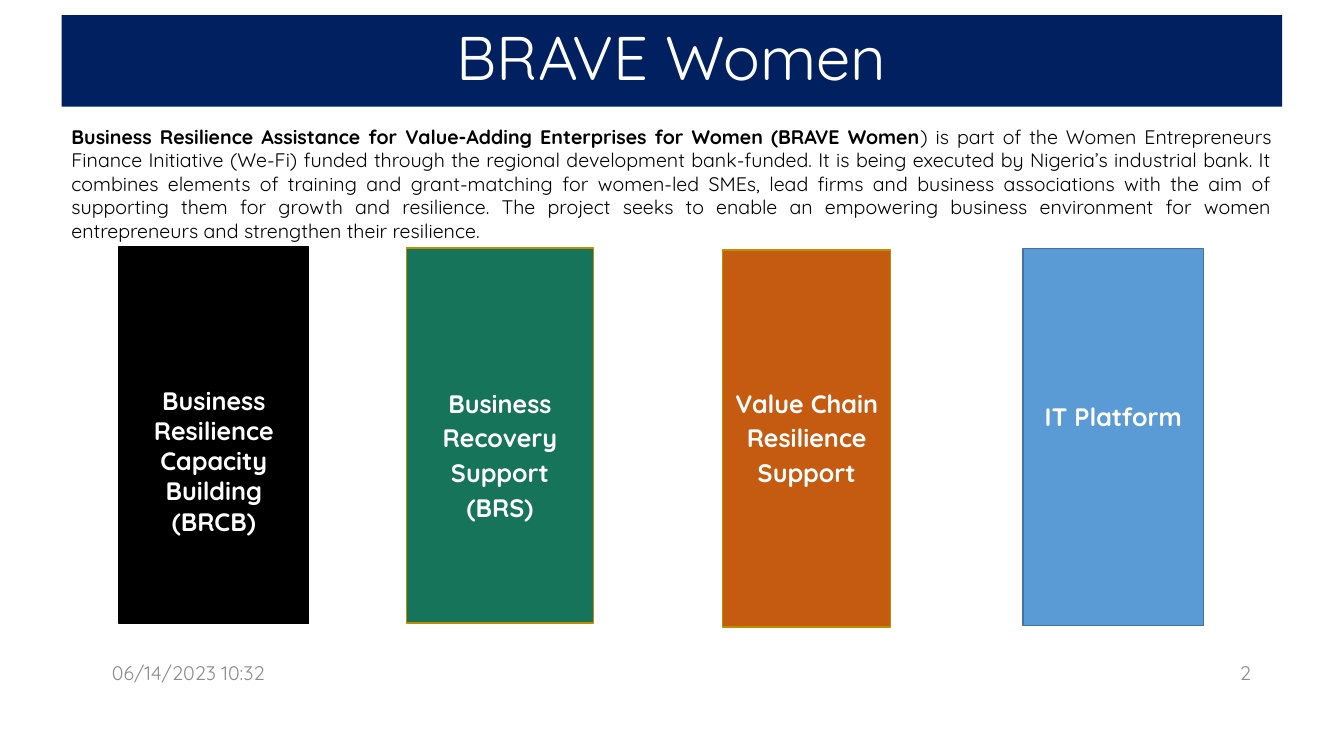
from pptx import Presentation
from pptx.dml.color import RGBColor
from pptx.enum.shapes import MSO_SHAPE
from pptx.enum.text import MSO_ANCHOR, MSO_AUTO_SIZE, PP_ALIGN
from pptx.util import Cm, Pt

RECT = MSO_SHAPE.RECTANGLE
TOP, MIDDLE = MSO_ANCHOR.TOP, MSO_ANCHOR.MIDDLE
LEFT, CENTER, RIGHT, JUSTIFY = PP_ALIGN.LEFT, PP_ALIGN.CENTER, PP_ALIGN.RIGHT, PP_ALIGN.JUSTIFY
NO_FIT = MSO_AUTO_SIZE.NONE

WHITE = RGBColor(0xFF, 0xFF, 0xFF)
BLACK = RGBColor(0x00, 0x00, 0x00)
NAVY = RGBColor(0x00, 0x20, 0x60)
GRAY = RGBColor(0x8C, 0x8C, 0x8C)
GREEN = RGBColor(0x16, 0x74, 0x5A)
ORANGE = RGBColor(0xC5, 0x5A, 0x11)
GOLD = RGBColor(0xBD, 0x8E, 0x00)
BLUE = RGBColor(0x5B, 0x9B, 0xD5)
STEEL = RGBColor(0x43, 0x73, 0x9E)
FONT = "Quicksand"

TITLE = "BRAVE Women"
INTRO_NAME = "Business Resilience Assistance for Value-Adding Enterprises for Women (BRAVE Women"
INTRO_TEXT = (
    ") is part of the Women Entrepreneurs Finance Initiative (We-Fi) funded through the "
    "regional development bank-funded. It is being executed by Nigeria’s industrial bank. "
    "It combines elements of training and grant-matching for women-led SMEs, lead firms and "
    "business associations with the aim of supporting them for growth and resilience. The "
    "project seeks to enable an empowering business environment for women entrepreneurs and "
    "strengthen their resilience."
)
PILLARS = [
    {"box": (3, 6.22, 4.78, 9.5), "fill": BLACK, "line": BLACK, "text_top": 9.7, "spacing": 1,
     "lines": ["Business Resilience Capacity Building", "(BRCB)"]},
    {"box": (10.24, 6.25, 4.72, 9.45), "fill": GREEN, "line": GOLD, "text_top": 9.66,
     "spacing": 1.15, "lines": ["Business Recovery Support (BRS)"]},
    {"box": (18.21, 6.3, 4.24, 9.5), "fill": ORANGE, "line": GOLD, "text_top": 9.66,
     "spacing": 1.15, "lines": ["Value Chain Resilience", "Support"]},
    {"box": (25.78, 6.27, 4.55, 9.5), "fill": BLUE, "line": STEEL, "text_top": 10.11,
     "spacing": 1, "lines": ["IT Platform"]},
]
FOOTERS = [
    ("06/14/2023 10:32", 2.57, LEFT),
    ("2", 24.16, RIGHT),
]

TITLE_BOX = (1.55, 0.38, 30.76, 2.31)
INTRO_BOX = (1.55, 3.02, 30.76, 3.25)
FOOTER_TOP, FOOTER_W, FOOTER_H = 16.43, 7.62, 1.02


def lengths(box):
    return [Cm(v) for v in box]


def write(tf, paragraphs, size, color, align, anchor=TOP, spacing=1):
    frame = {"word_wrap": True, "auto_size": NO_FIT, "vertical_anchor": anchor}
    for name, value in frame.items():
        setattr(tf, name, value)
    for i, runs in enumerate(paragraphs):
        p = tf.add_paragraph() if i else tf.paragraphs[0]
        p.alignment = align
        p.line_spacing = spacing
        for text, bold in runs:
            r = p.add_run()
            r.text = text
            r.font.color.rgb = color
            for name, value in {"name": FONT, "size": Pt(size), "bold": bold}.items():
                setattr(r.font, name, value)


def add_pillar(s, pillar):
    sp = s.shapes.add_shape(RECT, *lengths(pillar["box"]))
    sp.shadow.inherit = False
    sp.fill.solid()
    sp.fill.fore_color.rgb = pillar["fill"]
    sp.line.color.rgb = pillar["line"]
    sp.line.width = Pt(1)
    sp.text_frame.margin_top = Cm(pillar["text_top"] - pillar["box"][1])
    paragraphs = [[(line, True)] for line in pillar["lines"]]
    write(sp.text_frame, paragraphs, 18, WHITE, CENTER, spacing=pillar["spacing"])


def main():
    prs = Presentation()
    prs.slide_width, prs.slide_height = Cm(33.87), Cm(19.05)
    s = prs.slides.add_slide(prs.slide_layouts[5])

    title = s.shapes.title
    title.left, title.top, title.width, title.height = lengths(TITLE_BOX)
    title.fill.solid()
    title.fill.fore_color.rgb = NAVY
    write(title.text_frame, [[(TITLE, False)]], 44, WHITE, CENTER, MIDDLE, 0.9)

    intro = s.shapes.add_textbox(*lengths(INTRO_BOX))
    write(intro.text_frame, [[(INTRO_NAME, True), (INTRO_TEXT, False)]], 14, BLACK, JUSTIFY)

    for pillar in PILLARS:
        add_pillar(s, pillar)

    for text, left, align in FOOTERS:
        sp = s.shapes.add_textbox(*lengths((left, FOOTER_TOP, FOOTER_W, FOOTER_H)))
        write(sp.text_frame, [[(text, False)]], 14, GRAY, align, MIDDLE)

    prs.save("out.pptx")


if __name__ == "__main__":
    main()
